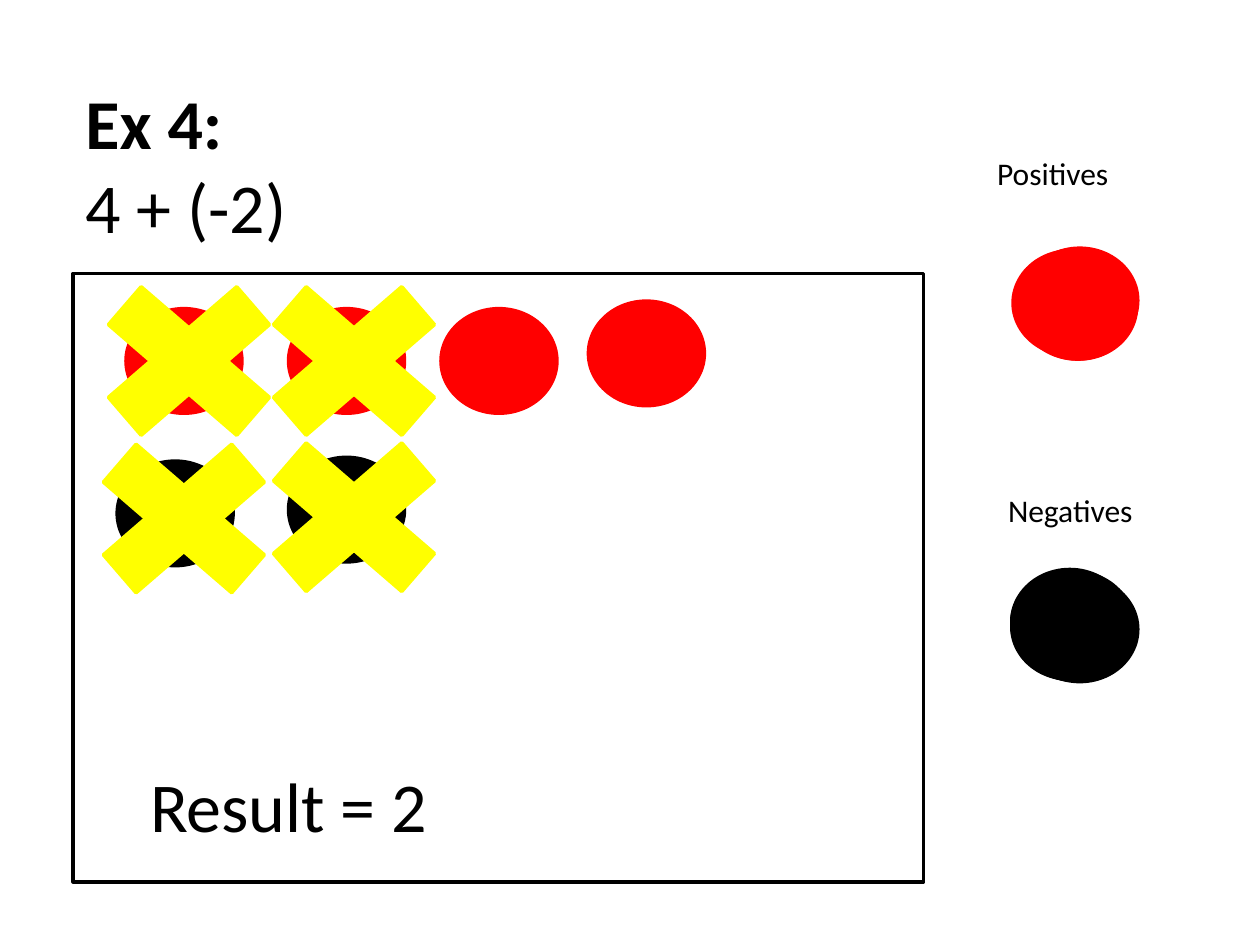
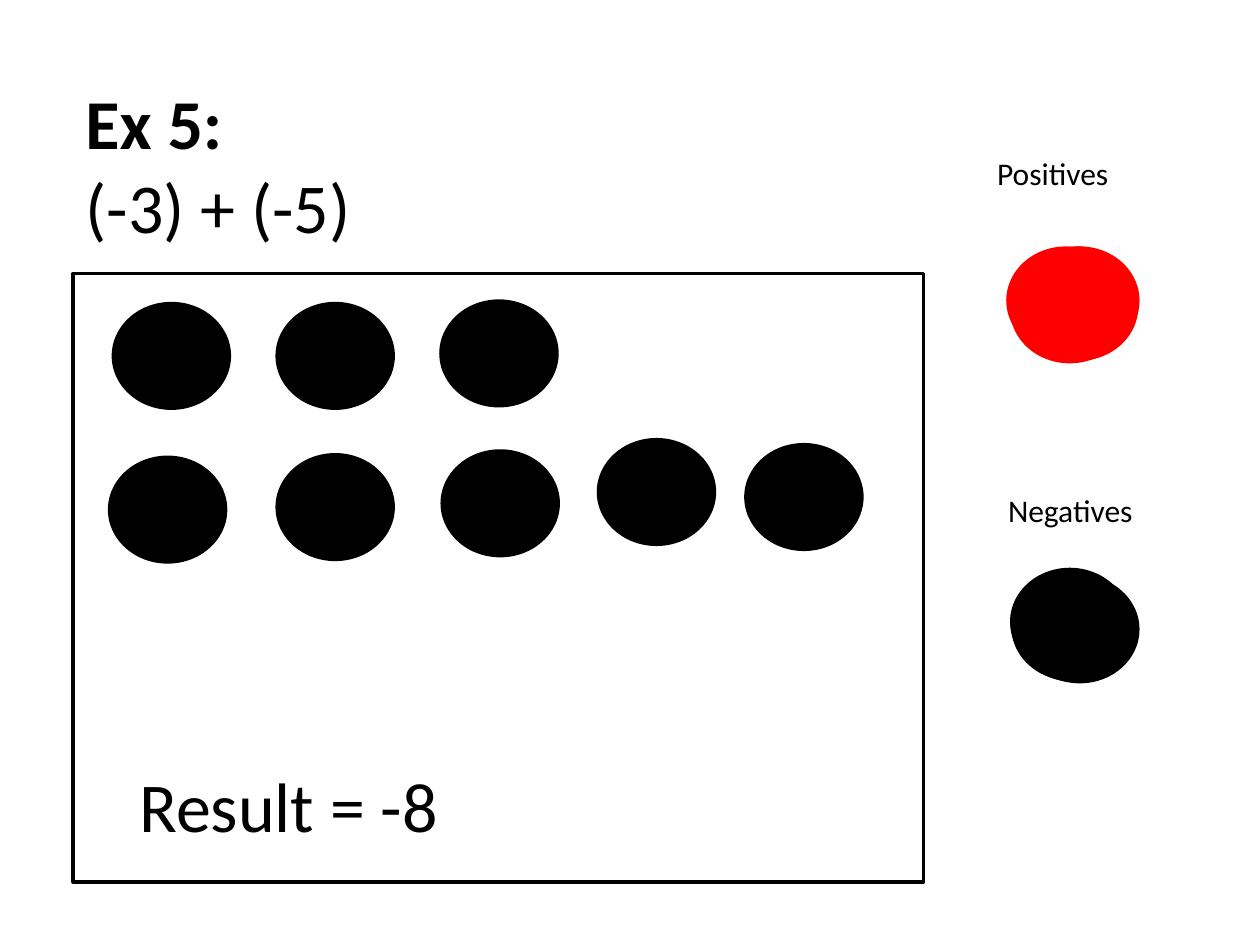
from pptx import Presentation
from pptx.dml.color import RGBColor
from pptx.enum.shapes import MSO_SHAPE as SHAPE
from pptx.enum.text import MSO_AUTO_SIZE as AUTO_SIZE, PP_ALIGN as ALIGN
from pptx.util import Emu, Pt

PX = 9144  # 100 px to the inch
BLACK, RED, YELLOW = "000000", "FF0000", "FFFF00"
COUNTER = (92, 83)
CROSS = (196, 169)


def px(*lengths):
    return [Emu(n * PX) for n in lengths]


def color(hex_text):
    return RGBColor.from_string(hex_text)


class Deck:
    """Holds the shared style and the slide being drawn."""

    font = "Calibri"
    line_width = Pt(2)

    def __init__(self):
        self.prs = Presentation()
        self.prs.slide_width, self.prs.slide_height = px(1000, 750)
        self.s = None

    def new_slide(self):
        self.s = self.prs.slides.add_slide(self.prs.slide_layouts[6])

    def text(self, box, lines, size, align=ALIGN.LEFT, bold_first=False):
        tf = self.s.shapes.add_textbox(*px(*box)).text_frame
        tf.word_wrap = True
        tf.auto_size = AUTO_SIZE.SHAPE_TO_FIT_TEXT
        tf.text = "\n".join(lines)
        for i, p in enumerate(tf.paragraphs):
            p.alignment = align
            for r in p.runs:
                r.font.name, r.font.size = self.font, Pt(size)
                r.font.color.rgb = color(BLACK)
                r.font.bold = bold_first and i == 0

    def shape(self, kind, box, line, fill=None, parent=None):
        sp = (parent or self.s).shapes.add_shape(kind, *px(*box))
        sp.shadow.inherit = False
        sp.line.color.rgb = color(line)
        sp.line.width = self.line_width
        if fill:
            sp.fill.solid()
            sp.fill.fore_color.rgb = color(fill)
        else:
            sp.fill.background()
        return sp

    def counters(self, places, fill, parent=None):
        for place in places:
            self.shape(SHAPE.OVAL, place + COUNTER, fill, fill, parent)

    def counter_row(self, places, fill):
        self.counters(places, fill, self.s.shapes.add_group_shape())

    def cross_column(self, places):
        group = self.s.shapes.add_group_shape()
        for place in places:
            sp = self.shape(SHAPE.MATH_MULTIPLY, place + CROSS, YELLOW, YELLOW, group)
            sp.adjustments[0] = 0.235

    def example(self, number, problem, result, positives, negatives, rows, crosses=()):
        """Draw one worked example: mat, spare counters, rows in play and result."""
        self.new_slide()
        self.text((744, 117, 183, 40), ["Positives"], 18, ALIGN.CENTER)
        self.text((758, 385, 183, 40), ["Negatives"], 18, ALIGN.CENTER)
        self.shape(SHAPE.RECTANGLE, (58, 217, 675, 483), BLACK)
        self.counters(positives, RED)
        self.counters(negatives, BLACK)
        for fill, places in rows:
            self.counter_row(places, fill)
        self.text((79, 600, 300, 77), [f"Result = {result}"], 40, ALIGN.CENTER)
        for places in crosses:
            self.cross_column(places)
        self.text((58, 58, 571, 145), [f"Ex {number}:", problem], 40, bold_first=True)


# Loose piles of spare counters; each slide adds its own to the shared ones.
POSITIVE_PILE = [(809, 198), (810, 202), (804, 199), (809, 202), (809, 199), (811, 197)]
NEGATIVE_PILE = [(804, 456), (811, 458), (803, 452), (804, 453),
                 (804, 454), (807, 457), (804, 455)]


def main():
    deck = Deck()
    deck.example(
        4, "4 + (-2)", "2",
        POSITIVE_PILE,
        NEGATIVE_PILE + [(803, 453), (807, 454), (807, 456), (803, 456)],
        rows=[(RED, [(467, 239), (350, 245), (229, 245), (100, 245)]),
              (BLACK, [(229, 363), (93, 366)])],
        crosses=[[(52, 202), (48, 327)], [(183, 202), (183, 326)]])
    deck.example(
        5, "(-3) + (-5)", "-8",
        POSITIVE_PILE + [(810, 198), (809, 197), (803, 204), (800, 197)],
        NEGATIVE_PILE,
        rows=[(BLACK, [(592, 353), (475, 349), (351, 358), (220, 361), (87, 363)]),
              (BLACK, [(350, 239), (220, 241), (90, 241)])])
    deck.prs.save("out.pptx")


if __name__ == "__main__":
    main()
